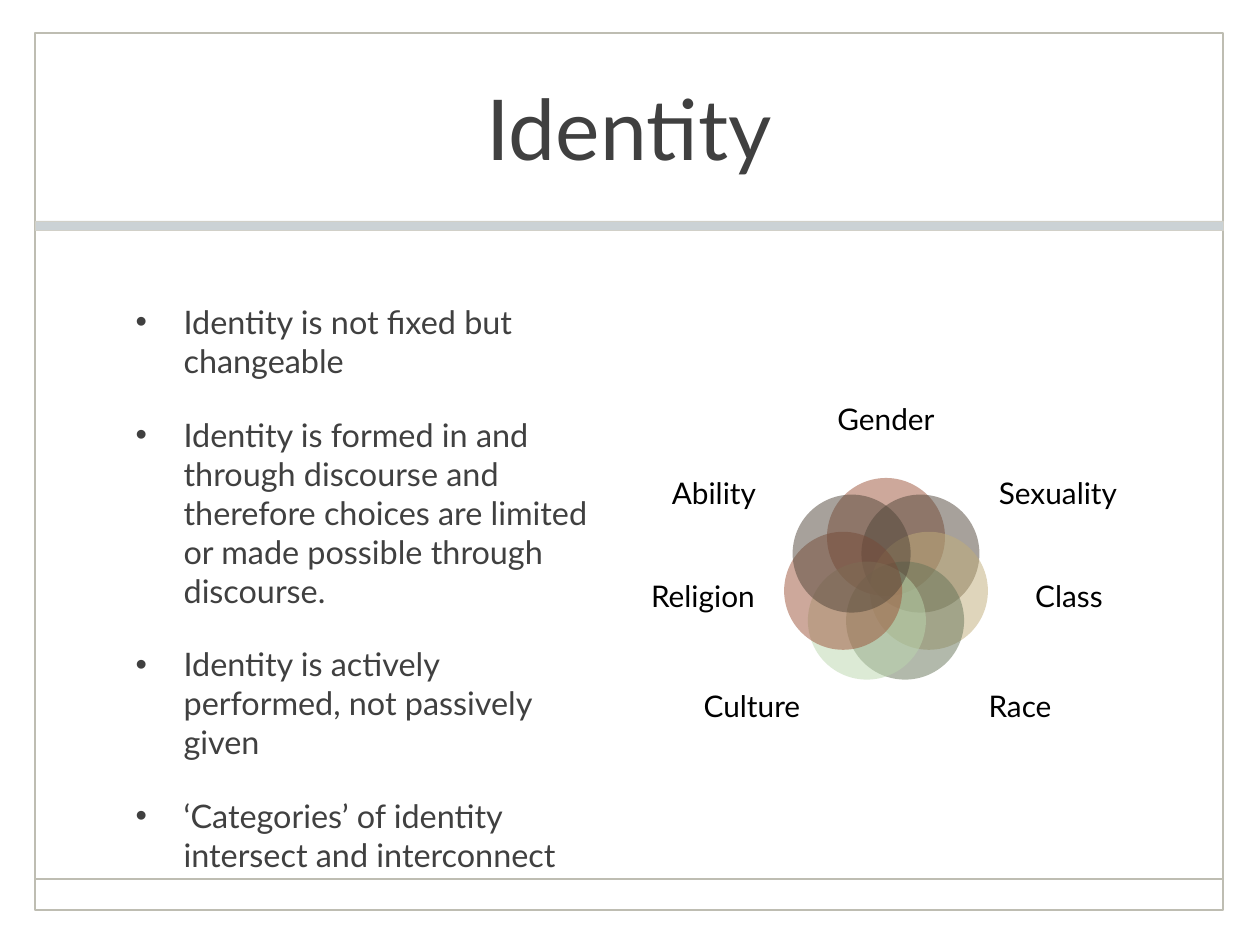
import math

import lxml.etree
import pptx
import pptx.dml.color
import pptx.enum.shapes
import pptx.enum.text
import pptx.oxml.ns
import pptx.util

RGBColor = pptx.dml.color.RGBColor
SHAPE = pptx.enum.shapes.MSO_SHAPE
ALIGN = pptx.enum.text.PP_ALIGN
ANCHOR = pptx.enum.text.MSO_ANCHOR
AUTO = pptx.enum.text.MSO_AUTO_SIZE
Pt = pptx.util.Pt
qn = pptx.oxml.ns.qn

SCALE = 914400 / 126
FONT = "Lato"
TEXT = RGBColor(0x40, 0x40, 0x40)
BLACK = RGBColor(0, 0, 0)
BORDER = RGBColor(0xBE, 0xBD, 0xB2)
BAND = RGBColor(0xCB, 0xD2, 0xD5)
BAND_LINE = RGBColor(0xD1, 0xD0, 0xC8)
RUST = RGBColor(0x9C, 0x52, 0x38)
BROWN = RGBColor(0x50, 0x45, 0x39)
SAND = RGBColor(0xC1, 0xAD, 0x79)
OLIVE = RGBColor(0x66, 0x75, 0x59)
MINT = RGBColor(0xBA, 0xD6, 0xAD)

BULLETS = [
    "Identity is not fixed but changeable",
    "Identity is formed in and through discourse and therefore choices are "
    "limited or made possible through discourse.",
    "Identity is actively performed, not passively given",
    "‘Categories’ of identity intersect and interconnect",
]
CATEGORIES = [
    ("Gender", RUST), ("Sexuality", BROWN), ("Class", SAND), ("Race", OLIVE),
    ("Culture", MINT), ("Religion", RUST), ("Ability", BROWN),
]
LABEL_SPOTS = [(0, -160, 135, 72), (172, -86, 127, 79), (183, 17, 125, 84), (134, 127, 135, 78)]


def px(*lengths):
    """Turn pixel lengths into EMU."""
    return [pptx.util.Emu(round(n * SCALE)) for n in lengths]


def style(p, size, color):
    """Set the font of every run in a paragraph."""
    for r in p.runs:
        r.font.name, r.font.size, r.font.color.rgb = FONT, Pt(size), color


def add_frame(s, x, y, w, h):
    """Draw the page border, the band below the title and the footer line."""
    border = s.shapes.add_shape(SHAPE.RECTANGLE, *px(x, y, w, h))
    border.fill.background()
    border.line.color.rgb, border.line.width = BORDER, Pt(1)
    rule = s.shapes.add_connector(
        pptx.enum.shapes.MSO_CONNECTOR.STRAIGHT, *px(x, y + 846, x + w, y + 846))
    rule.line.color.rgb, rule.line.width = BORDER, Pt(1)
    lxml.etree.SubElement(rule._element.spPr, qn("a:effectLst"))
    band = s.shapes.add_shape(SHAPE.RECTANGLE, *px(x, y + 188, w, 9))
    band.fill.solid()
    band.fill.fore_color.rgb = BAND
    band.line.color.rgb, band.line.width = BAND_LINE, Pt(0.25)
    for sp in (border, band):
        sp.shadow.inherit = False


def place(sp, x, y, w, h, anchor):
    """Move a placeholder and return its text frame."""
    sp.left, sp.top, sp.width, sp.height = px(x, y, w, h)
    tf = sp.text_frame
    tf.auto_size, tf.vertical_anchor, tf.word_wrap = AUTO.NONE, anchor, True
    return tf


def fill_title(s, x, y, w, h):
    """Write the centred title."""
    tf = place(s.shapes.title, x, y, w, h, ANCHOR.MIDDLE)
    tf.text = "Identity"
    tf.paragraphs[0].alignment = ALIGN.CENTER
    style(tf.paragraphs[0], 48, TEXT)


def fill_body(s, x, y, w, h):
    """Write the bulleted list."""
    tf = place(s.placeholders[1], x, y, w, h, ANCHOR.TOP)
    tf.text = "\n".join(BULLETS)
    indent = px(48)[0]
    for i, p in enumerate(tf.paragraphs):
        p.space_before = Pt(20 if i else 0)
        pPr = p._p.get_or_add_pPr()
        pPr.set("marL", str(indent))
        pPr.set("indent", str(-indent))
        lxml.etree.SubElement(pPr, qn("a:buFont"), typeface="Arial")
        lxml.etree.SubElement(pPr, qn("a:buChar"), char="•")
        style(p, 18.5, TEXT)


def add_circle(s, cx, cy, size, color):
    """Draw one half-transparent circle around a centre."""
    sp = s.shapes.add_shape(SHAPE.OVAL, *px(cx - size / 2, cy - size / 2, size, size))
    sp.shadow.inherit = False
    sp.line.fill.background()
    sp.fill.solid()
    sp.fill.fore_color.rgb = color
    clr = sp._element.spPr.find(".//" + qn("a:srgbClr"))
    lxml.etree.SubElement(clr, qn("a:alpha"), val="50000")


def add_label(s, cx, cy, w, h, text):
    """Write one category name around a centre."""
    tf = s.shapes.add_textbox(*px(cx - w / 2, cy - h / 2, w, h)).text_frame
    tf.word_wrap, tf.vertical_anchor = True, ANCHOR.MIDDLE
    tf.margin_left = tf.margin_right = tf.margin_top = tf.margin_bottom = 0
    tf.text = text
    p = tf.paragraphs[0]
    p.alignment, p.line_spacing = ALIGN.CENTER, 0.9
    style(p, 17, BLACK)


def add_venn(s, x, y, w, h):
    """Set overlapping circles on a ring, with mirrored labels around it."""
    cx, cy, ring, size = x + w / 2, y + 195, 44, 118
    count = len(CATEGORIES)
    for i, (name, color) in enumerate(CATEGORIES):
        angle = 2 * math.pi * i / count
        add_circle(s, cx + ring * math.sin(angle), cy - ring * math.cos(angle), size, color)
        side = 1 if i <= count // 2 else -1
        dx, dy, lw, lh = LABEL_SPOTS[min(i, count - i)]
        add_label(s, cx + side * dx, cy + dy, lw, lh, name)


def main():
    """Build and save the slide."""
    prs = pptx.Presentation()
    prs.slide_width, prs.slide_height = px(1260, 945)
    s = prs.slides.add_slide(prs.slide_layouts[1])
    add_frame(s, 35, 33, 1188, 877)
    fill_title(s, 123, 34, 1012, 185)
    fill_body(s, 123, 296, 491, 542)
    add_venn(s, 640, 386, 492, 361)
    prs.save("out.pptx")


if __name__ == "__main__":
    main()
